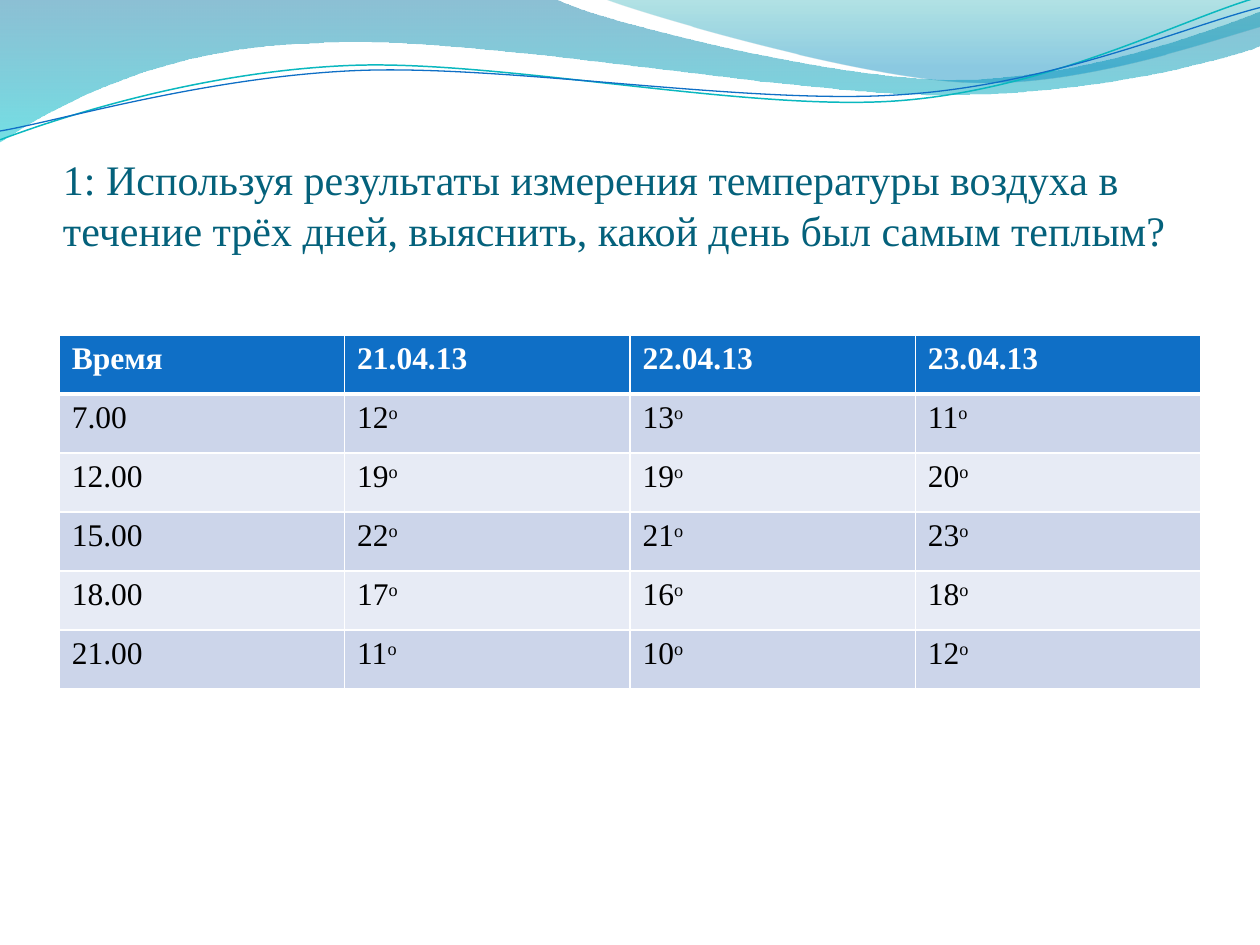
from dataclasses import dataclass
from math import cos, radians, sin

from lxml import etree
from pptx import Presentation
from pptx.dml.color import RGBColor
from pptx.enum.text import MSO_ANCHOR
from pptx.oxml.ns import qn
from pptx.util import Inches, Pt

BOTTOM = MSO_ANCHOR.BOTTOM
TILT = 2.7
PIVOT = (4.99, 0.58)


@dataclass(frozen=True)
class Theme:
    """Colours, typeface and type sizes of the slide."""
    font: str = "Times New Roman"
    title_size: int = 24
    table_size: int = 18
    title: str = "04617B"
    header: str = "0F6FC6"
    bands: tuple = ("CCD5EA", "E7EBF5")
    light: str = "FFFFFF"
    dark: str = "000000"
    teal_line: str = "0AB8BF"
    wide_wave: tuple = ((0, "0074A1", 45), (1, "00C6CF", 55))
    right_wave: tuple = ((0, "00A1A9", 30), (0.8, "008BBF", 45))


THEME = Theme()

WIDE_WAVE = [
    [(0, 0)], [(4.4, -0.01)],
    [(4.76, 0.17), (6.64, 0.63), (7.58, 0.63)],
    [(8.53, 0.63), (9.58, 0.26), (10, 0.09)],
    [(10.01, 0.36)],
    [(9.83, 0.44), (8.7, 0.76), (7.46, 0.75)],
    [(6.22, 0.75), (3.82, 0.28), (2.57, 0.34)],
    [(1.29, 0.36), (0.46, 0.83), (-0.01, 1.13)],
    [(0, 0)],
]
RIGHT_WAVE = [
    [(4.79, -0.01)],
    [(5.09, 0.11), (6.82, 0.62), (7.69, 0.65)],
    [(8.56, 0.69), (9.61, 0.32), (10, 0.21)],
    [(10, 0)], [(4.79, -0.01)],
]
TEAL_CURVE = [
    [(0, 1.11)],
    [(0.48, 0.93), (1.58, 0.57), (2.77, 0.52)],
    [(3.95, 0.47), (5.93, 0.89), (7.13, 0.8)],
    [(8.33, 0.71), (9.38, 0.15), (9.98, -0.02)],
]
BLUE_CURVE = [
    [(0, 1.04)],
    [(0.47, 0.96), (1.64, 0.61), (2.83, 0.56)],
    [(4.03, 0.51), (5.97, 0.84), (7.17, 0.75)],
    [(8.36, 0.67), (9.41, 0.21), (10, 0.06)],
]

TITLE = ("1: Используя результаты измерения температуры воздуха в течение "
         "трёх дней, выяснить, какой день был самым теплым?")
HEADINGS = ["Время", "21.04.13", "22.04.13", "23.04.13"]
READINGS = [
    ("7.00", 12, 13, 11),
    ("12.00", 19, 19, 20),
    ("15.00", 22, 21, 23),
    ("18.00", 17, 16, 18),
    ("21.00", 11, 10, 12),
]


def tilted(point):
    """Turn a point clockwise about the pivot by the tilt."""
    angle = radians(TILT)
    dx, dy = point[0] - PIVOT[0], point[1] - PIVOT[1]
    return (PIVOT[0] + dx * cos(angle) - dy * sin(angle),
            PIVOT[1] + dx * sin(angle) + dy * cos(angle))


def add_outline(page, segments, close):
    """Draw a freeform whose three-point segments are cubic curves."""
    emu_segments = [[(Inches(x), Inches(y)) for x, y in segment] for segment in segments]
    knots = [segment[-1] for segment in emu_segments]
    builder = page.shapes.build_freeform(*knots[0])
    builder.add_line_segments(knots[1:], close=close)
    shape = builder.convert_to_shape()
    shape.shadow.inherit = False
    lines = list(shape._element.iter(qn("a:lnTo")))
    for line, segment in zip(lines, emu_segments[1:]):
        if len(segment) == 3:
            cubic = etree.Element(qn("a:cubicBezTo"))
            for x, y in segment:
                etree.SubElement(cubic, qn("a:pt"), x=str(x - shape.left), y=str(y - shape.top))
            line.getparent().replace(line, cubic)
    return shape


def add_wave(page, segments, stops):
    """Add a closed wave with a translucent top-to-bottom gradient."""
    wave = add_outline(page, segments, close=True)
    wave.line.fill.background()
    wave.fill.gradient()
    wave.fill.gradient_angle = 270
    for stop, (position, color, _) in zip(wave.fill.gradient_stops, stops):
        stop.position = position
        stop.color.rgb = RGBColor.from_string(color)
    for node, (_, _, opacity) in zip(wave._element.spPr.iter(qn("a:srgbClr")), stops):
        etree.SubElement(node, qn("a:alpha"), val=str(opacity * 1000))


def add_curve(page, segments, color, width):
    """Add an open curved line, tilted as a whole."""
    level = [[tilted(point) for point in segment] for segment in segments]
    curve = add_outline(page, level, close=False)
    curve.rotation = -TILT
    curve.fill.background()
    curve.line.color.rgb = RGBColor.from_string(color)
    curve.line.width = Pt(width)


def add_span(para, text, *, size, color, bold=False, raised=False):
    """Append formatted text to a paragraph."""
    span = para.add_run()
    span.text = text
    span.font.name = THEME.font
    span.font.size = Pt(size)
    span.font.bold = bold
    span.font.color.rgb = RGBColor.from_string(color)
    if raised:
        span.font._element.set("baseline", "30000")


def add_title(page, text):
    """Add the bottom-anchored question."""
    box = page.shapes.add_textbox(Inches(0.5), Inches(0.77), Inches(9), Inches(1.25))
    frame = box.text_frame
    frame.word_wrap = True
    frame.vertical_anchor = BOTTOM
    frame.margin_left = frame.margin_right = frame.margin_bottom = 0
    frame.margin_top = Inches(0.05)
    add_span(frame.paragraphs[0], text, size=THEME.title_size, color=THEME.title)


def style_cell(cell, fill, top=1, bottom=1):
    """Give a cell white borders and a solid fill."""
    properties = cell._tc.get_or_add_tcPr()
    for side, width in (("L", 1), ("R", 1), ("T", top), ("B", bottom)):
        border = etree.SubElement(properties, qn(f"a:ln{side}"), w=str(Pt(width)))
        solid = etree.SubElement(border, qn("a:solidFill"))
        etree.SubElement(solid, qn("a:srgbClr"), val=THEME.light)
    cell.fill.solid()
    cell.fill.fore_color.rgb = RGBColor.from_string(fill)


def add_readings(page):
    """Add the table of temperatures by time and date."""
    table = page.shapes.add_table(
        len(READINGS) + 1, len(HEADINGS),
        Inches(0.47), Inches(2.66), Inches(9.06), Inches(2.81)).table
    for column, heading in enumerate(HEADINGS):
        cell = table.cell(0, column)
        style_cell(cell, THEME.header, bottom=3)
        add_span(cell.text_frame.paragraphs[0], heading,
                 size=THEME.table_size, color=THEME.light, bold=True)
    look = {"size": THEME.table_size, "color": THEME.dark}
    for row, values in enumerate(READINGS, start=1):
        for column, value in enumerate(values):
            cell = table.cell(row, column)
            style_cell(cell, THEME.bands[(row - 1) % 2], top=3 if row == 1 else 1)
            para = cell.text_frame.paragraphs[0]
            add_span(para, str(value), **look)
            if column:
                add_span(para, "о", raised=True, **look)


def main():
    """Build and save the slide."""
    deck = Presentation()
    deck.slide_width, deck.slide_height = Inches(10), Inches(7.5)
    page = deck.slides.add_slide(deck.slide_layouts[6])
    add_wave(page, WIDE_WAVE, THEME.wide_wave)
    add_wave(page, RIGHT_WAVE, THEME.right_wave)
    add_curve(page, TEAL_CURVE, THEME.teal_line, 0.85)
    add_curve(page, BLUE_CURVE, THEME.header, 0.75)
    add_title(page, TITLE)
    add_readings(page)
    deck.save("out.pptx")


if __name__ == "__main__":
    main()
